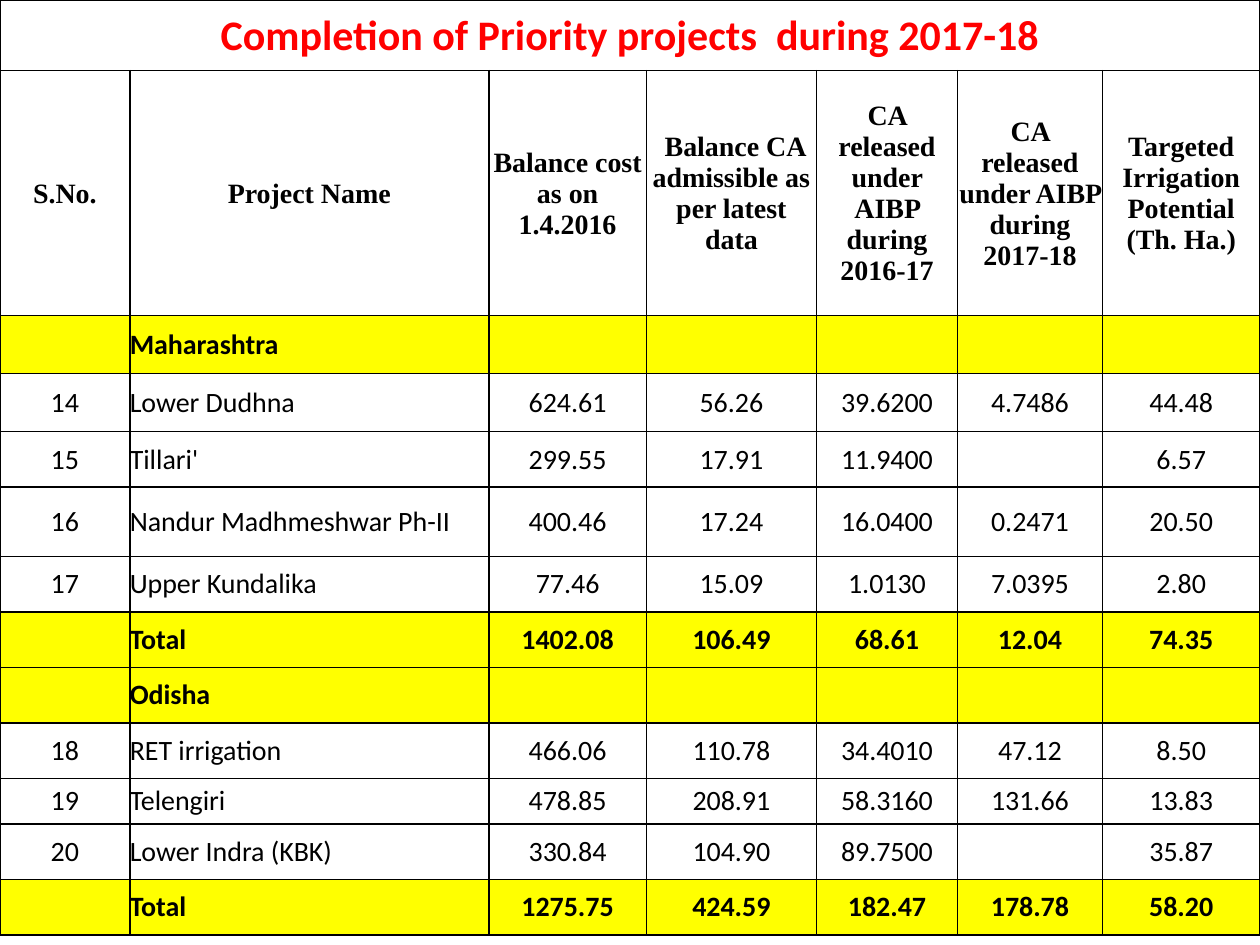
from lxml import etree
from pptx import Presentation, util as u
from pptx.dml import color
from pptx.enum import text
from pptx.oxml import ns

COLUMNS = [1.03, 2.85, 1.25, 1.35, 1.12, 1.15, 1.25]
ROWS = [0.56, 1.94, 0.46, 0.46, 0.44, 0.55, 0.44, 0.44, 0.44, 0.44, 0.36, 0.44, 0.44]
TITLE = "Completion of Priority projects  during 2017-18"
HEADINGS = [
    "S.No.", "Project Name", "Balance cost as on 1.4.2016",
    " Balance CA admissible as per latest data",
    "CA released under AIBP during 2016-17",
    "CA released under AIBP during 2017-18",
    "Targeted Irrigation Potential (Th. Ha.)",
]
PROJECTS = [
    ["", "Maharashtra", "", "", "", "", ""],
    ["14", "Lower Dudhna", "624.61", "56.26", "39.6200", "4.7486", "44.48"],
    ["15", "Tillari'", "299.55", "17.91", "11.9400", "", "6.57"],
    ["16", "Nandur Madhmeshwar Ph-II", "400.46", "17.24", "16.0400", "0.2471", "20.50"],
    ["17", "Upper Kundalika", "77.46", "15.09", "1.0130", "7.0395", "2.80"],
    ["", "Total", "1402.08", "106.49", "68.61", "12.04", "74.35"],
    ["", "Odisha", "", "", "", "", ""],
    ["18", "RET irrigation", "466.06", "110.78", "34.4010", "47.12", "8.50"],
    ["19", "Telengiri", "478.85", "208.91", "58.3160", "131.66", "13.83"],
    ["20", "Lower Indra (KBK)", "330.84", "104.90", "89.7500", "", "35.87"],
    ["", "Total", "1275.75", "424.59", "182.47", "178.78", "58.20"],
]
TITLE_FONT = {"name": "Calibri", "size": u.Pt(24), "bold": True}
HEADING_FONT = {"name": "Times New Roman", "size": u.Pt(16), "bold": True}
BODY_FONT = {"name": "Calibri", "size": u.Pt(16), "bold": False}
SUMMARY_FONT = {**BODY_FONT, "bold": True}


def rgb(value):
    """Return the colour for a hex string."""
    return color.RGBColor.from_string(value)


def set_format(target, values):
    """Set each named attribute on the target."""
    for name, value in values.items():
        setattr(target, name, value)


def add_borders(cell):
    """Draw a thin black line on all four sides of a cell."""
    properties = cell._tc.get_or_add_tcPr()
    for position, side in enumerate(("a:lnL", "a:lnR", "a:lnT", "a:lnB")):
        line = etree.Element(ns.qn(side), w=str(u.Pt(1)))
        fill = etree.SubElement(line, ns.qn("a:solidFill"))
        etree.SubElement(fill, ns.qn("a:srgbClr"), val="000000")
        properties.insert(position, line)


def write_cell(cell, words, font, ink="000000", fill=None, centred=True, margin=0):
    """Fill, border and letter one table cell."""
    set_format(cell, {
        "margin_left": margin, "margin_right": margin, "margin_top": margin,
        "margin_bottom": 0, "vertical_anchor": text.MSO_ANCHOR.MIDDLE,
    })
    if fill:
        cell.fill.solid()
        cell.fill.fore_color.rgb = rgb(fill)
    else:
        cell.fill.background()
    add_borders(cell)
    paragraph = cell.text_frame.paragraphs[0]
    paragraph.alignment = text.PP_ALIGN.CENTER if centred else text.PP_ALIGN.LEFT
    if words:
        run = paragraph.add_run()
        run.text = words
        set_format(run.font, font)
        run.font.color.rgb = rgb(ink)


def add_project_table(slide, left, top, width, height):
    """Place the project table in the given box."""
    table = slide.shapes.add_table(
        len(ROWS), len(COLUMNS), left, top, width, height).table
    set_format(table, {"first_row": False, "horz_banding": False})
    for column, share in zip(table.columns, COLUMNS):
        column.width = int(width * share / sum(COLUMNS))
    for row, share in zip(table.rows, ROWS):
        row.height = int(height * share / sum(ROWS))

    margin = u.Inches(0.01)
    for index, heading in enumerate(HEADINGS):
        write_cell(table.cell(0, index), "" if index else TITLE, TITLE_FONT,
                   ink="FF0000", margin=margin)
        write_cell(table.cell(1, index), heading, HEADING_FONT, margin=margin)
    table.cell(0, 0).merge(table.cell(0, len(COLUMNS) - 1))

    for row_index, project in enumerate(PROJECTS, start=2):
        summary = not project[0]
        for index, words in enumerate(project):
            write_cell(table.cell(row_index, index), words,
                       SUMMARY_FONT if summary else BODY_FONT,
                       fill="FFFF00" if summary else None, centred=index != 1)


def main():
    """Build and save the presentation."""
    presentation = Presentation()
    set_format(presentation, {"slide_width": u.Inches(10), "slide_height": u.Inches(7.5)})
    slide = presentation.slides.add_slide(presentation.slide_layouts[6])
    add_project_table(slide, 0, 0, presentation.slide_width,
                      int(presentation.slide_height * 0.99))
    presentation.save("out.pptx")


if __name__ == "__main__":
    main()
